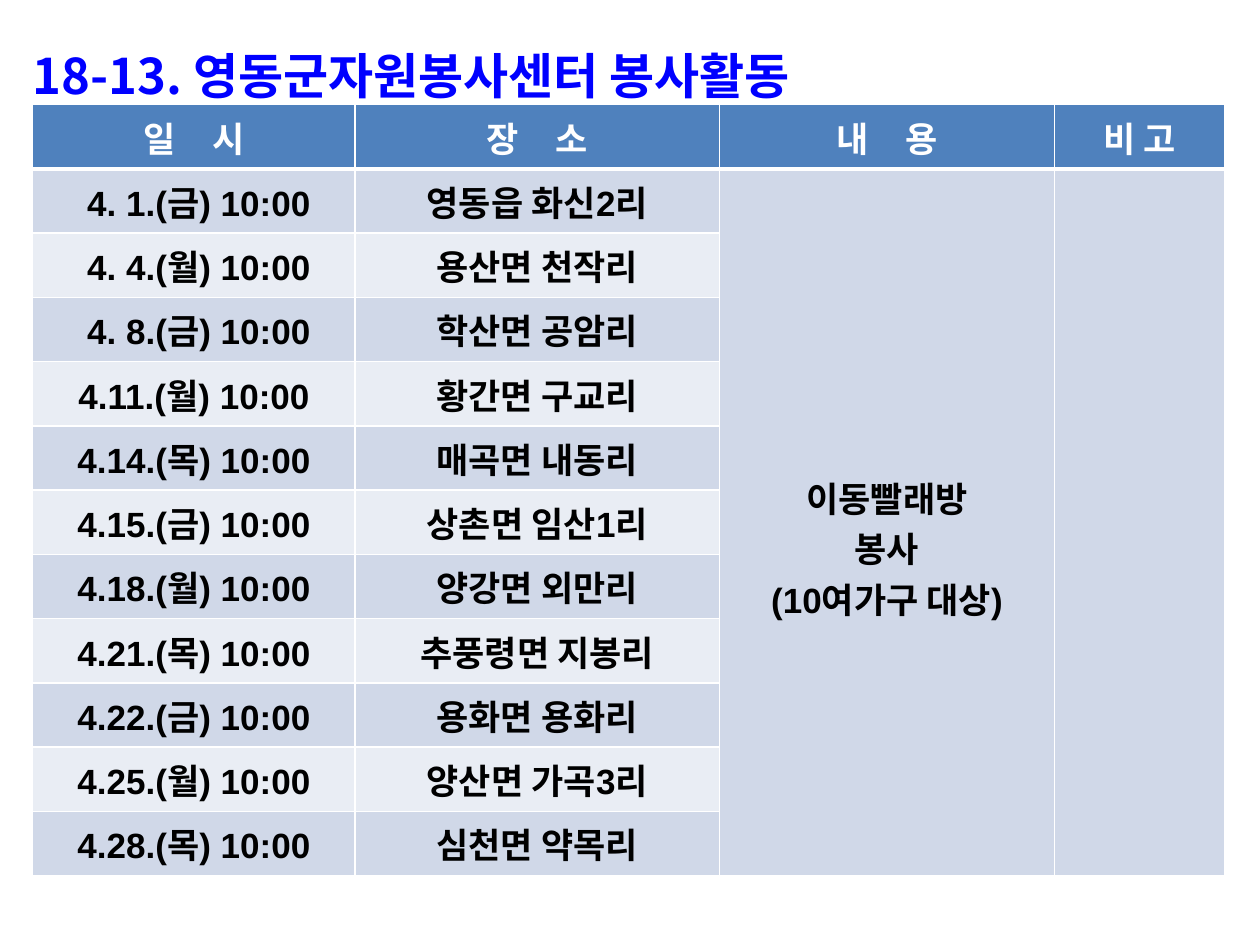
from lxml import etree
from pptx import Presentation
from pptx import util as u
from pptx.dml.color import RGBColor
from pptx.enum import text
from pptx.oxml import ns

TITLE = "18-13. 영동군자원봉사센터 봉사활동"
HEADERS = ["일 시", "장 소", "내 용", "비 고"]
VISITS = [
    (" 4. 1.(금) 10:00", "영동읍 화신2리"),
    (" 4. 4.(월) 10:00", "용산면 천작리"),
    (" 4. 8.(금) 10:00", "학산면 공암리"),
    ("4.11.(월) 10:00", "황간면 구교리"),
    ("4.14.(목) 10:00", "매곡면 내동리"),
    ("4.15.(금) 10:00", "상촌면 임산1리"),
    ("4.18.(월) 10:00", "양강면 외만리"),
    ("4.21.(목) 10:00", "추풍령면 지봉리"),
    ("4.22.(금) 10:00", "용화면 용화리"),
    ("4.25.(월) 10:00", "양산면 가곡3리"),
    ("4.28.(목) 10:00", "심천면 약목리"),
]
ACTIVITY = ["이동빨래방", "봉사", "(10여가구 대상)"]
COLORS = {"title": "0000FF", "header": "4F81BD", "odd": "D0D8E8",
          "even": "E9EDF4", "white": "FFFFFF", "black": "000000"}
KOREAN = "Noto Sans CJK KR"
COL_WIDTHS = [6.5, 7.34, 6.76, 3.43]
ROW_HEIGHT = 1.295
LEFT, TOP = 0.66, 2.11


def rgb(name):
    return RGBColor.from_string(COLORS[name])


def apply(obj, values):
    for key, value in values.items():
        setattr(obj, key, value)


def write(p, content, color, size, font, spacing=0):
    r = p.add_run()
    r.text = content
    apply(r.font, {"name": font, "size": u.Pt(size), "bold": True})
    r.font.color.rgb = rgb(color)
    rpr = r.font._element
    etree.SubElement(rpr, ns.qn("a:ea")).set("typeface", KOREAN)
    if spacing:
        rpr.set("spc", str(spacing))


def border(cell, bottom):
    tcpr = cell._tc.get_or_add_tcPr()
    widths = {"lnL": 1, "lnR": 1, "lnT": 1, "lnB": bottom}
    for i, (side, width) in enumerate(widths.items()):
        ln = etree.Element(ns.qn(f"a:{side}"), w=str(u.Pt(width)))
        fill = etree.SubElement(ln, ns.qn("a:solidFill"))
        etree.SubElement(fill, ns.qn("a:srgbClr")).set("val", COLORS["white"])
        tcpr.insert(i, ln)


def fill_cell(cell, lines, header, fill, spacing=0):
    cell.fill.solid()
    cell.fill.fore_color.rgb = rgb(fill)
    cell.vertical_anchor = text.MSO_ANCHOR.MIDDLE
    border(cell, 3 if header else 1)
    tf = cell.text_frame
    for i, line in enumerate(lines):
        p = tf.add_paragraph() if i else tf.paragraphs[0]
        p.alignment = text.PP_ALIGN.CENTER
        write(p, line, "white" if header else "black", 20, "Arial", spacing)


def add_title(s):
    sp = s.shapes.title
    apply(sp, {"left": u.Cm(0.41), "top": u.Cm(0.2),
               "width": u.Cm(23.83), "height": u.Cm(8.26)})
    tf = sp.text_frame
    apply(tf, {"word_wrap": False, "auto_size": text.MSO_AUTO_SIZE.NONE,
               "vertical_anchor": text.MSO_ANCHOR.TOP})
    p = tf.paragraphs[0]
    apply(p, {"alignment": text.PP_ALIGN.LEFT, "line_spacing": 1.5})
    write(p, TITLE, "title", 28, KOREAN)


def add_schedule(s):
    rows = len(VISITS) + 1
    table = s.shapes.add_table(
        rows, len(HEADERS), u.Cm(LEFT), u.Cm(TOP),
        u.Cm(sum(COL_WIDTHS)), u.Cm(ROW_HEIGHT * rows)).table
    for col, width in zip(table.columns, COL_WIDTHS):
        col.width = u.Cm(width)
    for row in table.rows:
        row.height = u.Cm(ROW_HEIGHT)
    for c, header in enumerate(HEADERS):
        spacing = 840 if c < 3 else 0
        fill_cell(table.cell(0, c), [header], True, "header", spacing)
    for r, visit in enumerate(VISITS, 1):
        shared = [ACTIVITY, []] if r == 1 else [[], []]
        for c, lines in enumerate([[item] for item in visit] + shared):
            fill = "odd" if r % 2 or c > 1 else "even"
            fill_cell(table.cell(r, c), lines, False, fill)
    for c in (2, 3):
        table.cell(1, c).merge(table.cell(rows - 1, c))
    table.cell(1, 2).margin_top = u.Cm(1.15)


def main():
    prs = Presentation()
    apply(prs, {"slide_width": u.Cm(25.4), "slide_height": u.Cm(19.05)})
    s = prs.slides.add_slide(prs.slide_layouts[5])
    add_title(s)
    add_schedule(s)
    prs.save("out.pptx")


if __name__ == "__main__":
    main()
